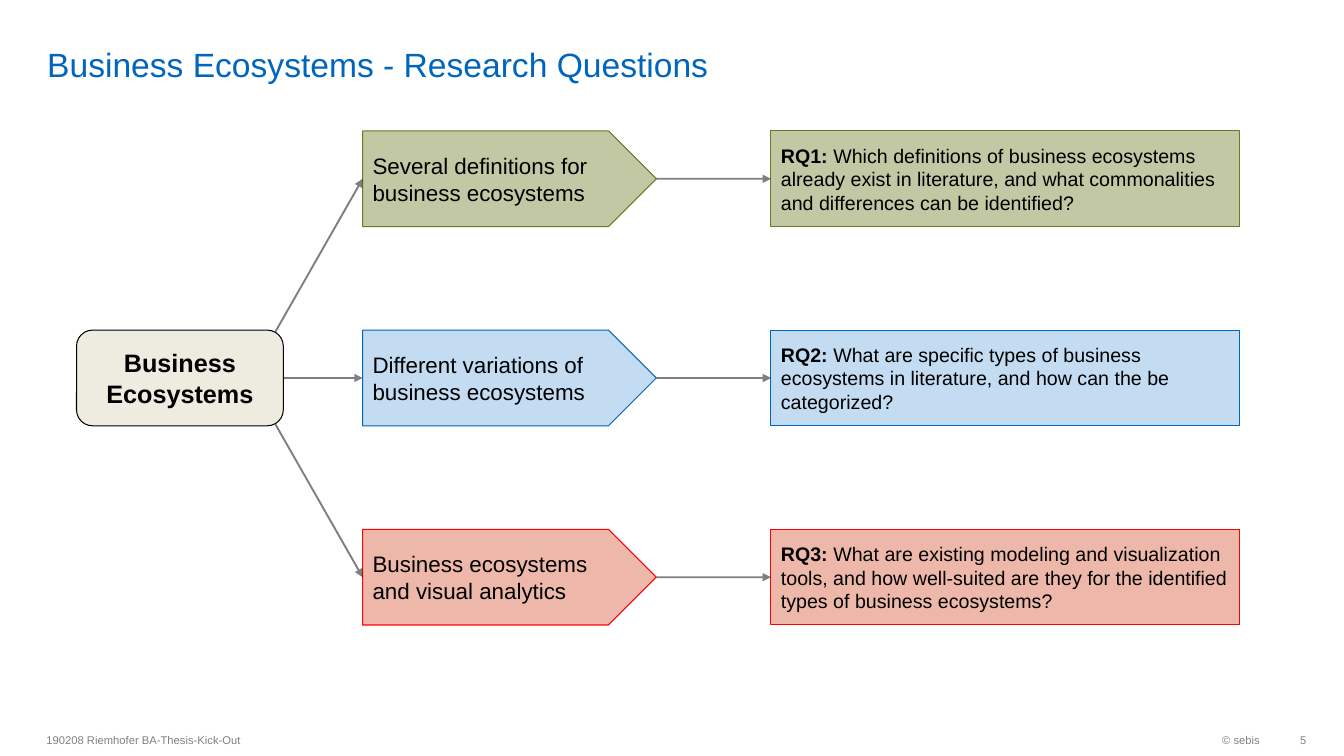
from lxml import etree
from pptx import Presentation
from pptx.dml.color import RGBColor
from pptx.enum import shapes, text
from pptx.oxml import ns
from pptx.util import Cm, Pt

BLACK = RGBColor(0x00, 0x00, 0x00)
GRAY = RGBColor(0x80, 0x80, 0x80)
BLUE = RGBColor(0x00, 0x65, 0xBD)
SKY = RGBColor(0xC4, 0xDC, 0xF2)
OLIVE = RGBColor(0x6D, 0x78, 0x23)
SAGE = RGBColor(0xC1, 0xC8, 0xA3)
RED = RGBColor(0xFF, 0x00, 0x00)
ROSE = RGBColor(0xED, 0xB8, 0xA9)
SAND = RGBColor(0xEE, 0xEC, 0xE1)

TITLE = "Business Ecosystems - Research Questions"
TOPIC = "Business Ecosystems"
# topic, question label, question, fill, line
ROWS = [
    ("Several definitions for business ecosystems", "RQ1: ",
     "Which definitions of business ecosystems already exist in literature, "
     "and what commonalities and differences can be identified?", SAGE, OLIVE),
    ("Different variations of business ecosystems", "RQ2: ",
     "What are specific types of business ecosystems in literature, "
     "and how can the be categorized?", SKY, BLUE),
    ("Business ecosystems and visual analytics", "RQ3: ",
     "What are existing modeling and visualization tools, and how well-suited "
     "are they for the identified types of business ecosystems?", ROSE, RED),
]
# text, left, width, alignment, right inset
FOOT = [
    ("190208 Riemhofer BA-Thesis-Kick-Out", 0.92, 16, text.PP_ALIGN.LEFT, 0.25),
    ("© sebis", 26.06, 5.94, text.PP_ALIGN.RIGHT, 0.25),
    ("5", 32, 0.92, text.PP_ALIGN.RIGHT, 0),
]

TOP, STEP, HIGH = 3.3, 5.02, 2.41
ROOT_X, ROOT_W = 1.93, 5.21
PLATE_X, PLATE_W = 9.14, 7.4
ASK_X, ASK_W = 19.43, 11.81
CORNER = 0.2  # inset of the slanted arrows at the root's rounded corners


def write(shape, runs, size, color=BLACK, align=text.PP_ALIGN.LEFT,
          anchor=text.MSO_ANCHOR.MIDDLE):
    """Fill a shape with one paragraph of (words, bold) runs."""
    frame = shape.text_frame
    frame.word_wrap = True
    frame.vertical_anchor = anchor
    par = frame.paragraphs[0]
    par.alignment = align
    par.font.name = "Arial"
    par.font.size = Pt(size)
    par.font.color.rgb = color
    for words, bold in runs:
        run = par.add_run()
        run.text = words
        run.font.bold = bold
    return frame


def block(kind, left, top, width, fill, line):
    shape = slide.shapes.add_shape(kind, Cm(left), Cm(top), Cm(width), Cm(HIGH))
    shape.shadow.inherit = False
    shape.fill.solid()
    shape.fill.fore_color.rgb = fill
    shape.line.color.rgb = line
    shape.line.width = Pt(0.75)
    return shape


def label(left, top, width, height):
    return slide.shapes.add_textbox(Cm(left), Cm(top), Cm(width), Cm(height))


def arrow(start, end, spot=None):
    """Join start to end's left side, from its right side or from a spot."""
    x, y = spot or (0, 0)
    link = slide.shapes.add_connector(
        shapes.MSO_CONNECTOR.STRAIGHT, Cm(x), Cm(y), Cm(x), Cm(y))
    if not spot:
        link.begin_connect(start, 3)
    link.end_connect(end, 1)
    link.line.width = Pt(1.35)
    link.line.color.rgb = BLACK
    props = link.line._get_or_add_ln()
    tone = props.find(".//" + ns.qn("a:srgbClr"))
    etree.SubElement(tone, ns.qn("a:alpha"), val="50000")
    etree.SubElement(props, ns.qn("a:tailEnd"), type="triangle")
    etree.SubElement(link._element.spPr, ns.qn("a:effectLst"))


deck = Presentation()
deck.slide_width, deck.slide_height = Cm(33.87), Cm(19.05)
slide = deck.slides.add_slide(deck.slide_layouts[6])

frame = write(label(0.94, 0.13, 29.4, 2), [(TITLE, False)], 24, BLUE,
              anchor=text.MSO_ANCHOR.BOTTOM)
frame.margin_top = frame.margin_bottom = 0

for words, left, width, align, inset in FOOT:
    frame = write(label(left, 18.25, width, 0.8), [(words, False)], 8, GRAY, align)
    frame.margin_right = Cm(inset)

mid = TOP + STEP
root = block(shapes.MSO_SHAPE.ROUNDED_RECTANGLE, ROOT_X, mid, ROOT_W, SAND, BLACK)
write(root, [(TOPIC, True)], 18, align=text.PP_ALIGN.CENTER)

edge = ROOT_X + ROOT_W - CORNER
spots = [(edge, mid + 0.04), None, (edge, mid + HIGH - 0.04)]
for i, (topic, tag, ask, fill, line) in enumerate(ROWS):
    top = TOP + i * STEP
    plate = block(shapes.MSO_SHAPE.PENTAGON, PLATE_X, top, PLATE_W, fill, line)
    write(plate, [(topic, False)], 16)
    box = block(shapes.MSO_SHAPE.RECTANGLE, ASK_X, top, ASK_W, fill, line)
    write(box, [(tag, True), (ask, False)], 14)
    arrow(root, plate, spots[i])
    arrow(plate, box)

deck.save("out.pptx")
